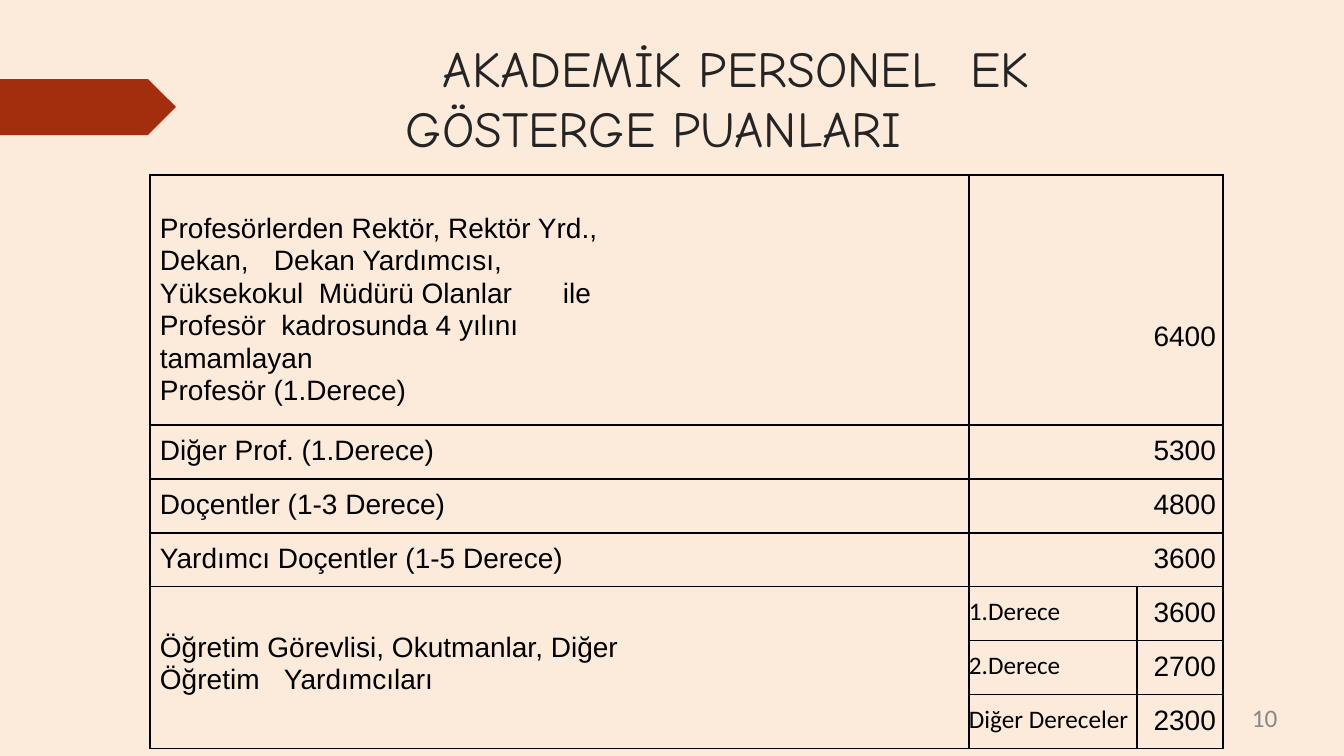
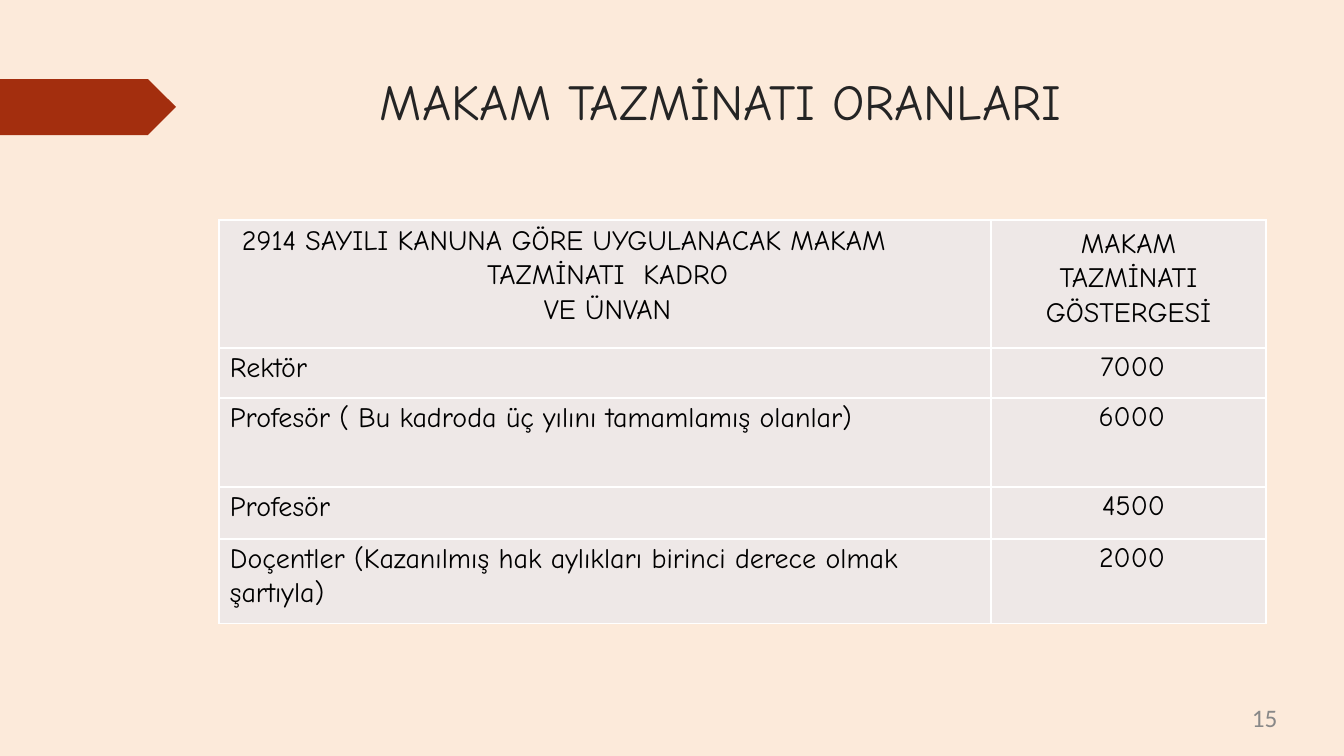
from lxml.etree import SubElement
from pptx import Presentation
from pptx.dml.color import RGBColor
from pptx.enum.shapes import MSO_SHAPE
from pptx.enum.text import MSO_ANCHOR, PP_ALIGN
from pptx.oxml.ns import qn
from pptx.util import Pt

EMU_PER_PX = 914400 / 100.8

CREAM = RGBColor(0xFC, 0xEA, 0xDA)
RUST = RGBColor(0xA3, 0x2E, 0x0E)
INK = RGBColor(0x24, 0x24, 0x24)
GREY = RGBColor(0x88, 0x88, 0x88)
PALE = RGBColor(0xEE, 0xE8, 0xE7)
BLACK = RGBColor(0x00, 0x00, 0x00)
WHITE = RGBColor(0xFF, 0xFF, 0xFF)

HAND, SANS, SMALL = "Comic Neue", "Arial", "Calibri"
LEFT, CENTER, RIGHT = PP_ALIGN.LEFT, PP_ALIGN.CENTER, PP_ALIGN.RIGHT
TOP, MIDDLE = MSO_ANCHOR.TOP, MSO_ANCHOR.MIDDLE


def px(n):
    return round(n * EMU_PER_PX)


def set_insets(holder, insets):
    """Set left, top, right and bottom margins of a cell or text frame."""
    (holder.margin_left, holder.margin_top,
     holder.margin_right, holder.margin_bottom) = map(px, insets)


def write(p, text, font, size, color, align=LEFT, spacing=None, tabs=()):
    p.text = text
    p.alignment = align
    if tabs:
        tab_list = SubElement(p._p.get_or_add_pPr(), qn("a:tabLst"))
        for pos in tabs:
            SubElement(tab_list, qn("a:tab"), pos=str(px(pos)), algn="l")
    if spacing:
        p.line_spacing = spacing
    p.font.name, p.font.size, p.font.color.rgb = font, Pt(size), color


def add_text(s, box, insets, text, font, size, color, spacing=None):
    tf = s.shapes.add_textbox(*map(px, box)).text_frame
    tf.word_wrap = True
    set_insets(tf, insets)
    p = tf.paragraphs[0]
    write(p, text, font, size, color, spacing=spacing)
    return p


def add_base(prs, title, title_box, number, indent=0):
    """Add a slide with the arrow tag, title and page number."""
    s = prs.slides.add_slide(prs.slide_layouts[6])
    tag = s.shapes.add_shape(MSO_SHAPE.PENTAGON, *map(px, (0, 79, 176, 56)))
    tag.shadow.inherit = False
    tag.fill.solid()
    tag.fill.fore_color.rgb = RUST
    tag.line.fill.background()
    p = add_text(s, title_box, (1, 2, 0, 0), title, HAND, 36, INK)
    p._p.get_or_add_pPr().set("indent", str(px(indent)))
    add_text(s, (1249, 707, 40, 28), (3, 0, 0, 0), number, SMALL, 18, GREY, Pt(18))
    return s


def add_grid(s, left, top, cols, rows, fill, border):
    shape = s.shapes.add_table(len(rows), len(cols), px(left), px(top),
                               px(sum(cols)), px(sum(rows)))
    table = shape.table
    table.first_row = table.horz_banding = False
    for col, width in zip(table.columns, cols):
        col.width = px(width)
    for row, height in zip(table.rows, rows):
        row.height = px(height)
    for cell in table.iter_cells():
        set_insets(cell, (0, 0, 0, 0))
        tc_pr = cell._tc.get_or_add_tcPr()
        for side in ("lnL", "lnR", "lnT", "lnB"):
            ln = SubElement(tc_pr, qn(f"a:{side}"), w=str(Pt(1)))
            solid = SubElement(ln, qn("a:solidFill"))
            SubElement(solid, qn("a:srgbClr"), val=str(border))
        cell.fill.solid()
        cell.fill.fore_color.rgb = fill
    return table


def fill_cell(cell, text, font, size=20, aligns=(LEFT,), insets=(0, 0, 0, 0),
              anchor=MIDDLE, spacing=None, tabs=()):
    """Write one paragraph for each line of text; aligns holds one value for each."""
    set_insets(cell, insets)
    cell.vertical_anchor = anchor
    tf = cell.text_frame
    for i, (line, align) in enumerate(zip(text.split("\n"), aligns)):
        p = tf.add_paragraph() if i else tf.paragraphs[0]
        write(p, line, font, size, BLACK, align, spacing, tabs)


def add_score_table(s, left, top):
    table = add_grid(s, left, top, (819, 168, 86), (250,) + (54,) * 6, CREAM, BLACK)
    for row in range(4):
        table.cell(row, 1).merge(table.cell(row, 2))
    table.cell(4, 0).merge(table.cell(6, 0))

    fill_cell(table.cell(0, 0),
              "Profesörlerden Rektör, Rektör Yrd., Dekan,\tDekan Yardımcısı, "
              "Yüksekokul  Müdürü Olanlar\tile Profesör  kadrosunda 4 yılını "
              "tamamlayan\nProfesör (1.Derece)",
              SANS, aligns=(LEFT, LEFT), insets=(10, 18, 349, 0),
              spacing=1.04, tabs=(114, 403))
    fill_cell(table.cell(0, 1), "6400", SANS, aligns=(RIGHT,), insets=(0, 74, 7, 0))

    ranks = (("Diğer Prof. (1.Derece)", "5300"),
             ("Doçentler (1-3 Derece)", "4800"),
             ("Yardımcı Doçentler (1-5 Derece)", "3600"))
    for row, (rank, score) in enumerate(ranks, 1):
        fill_cell(table.cell(row, 0), rank, SANS, insets=(10, 0, 0, 3))
        fill_cell(table.cell(row, 1), score, SANS, aligns=(RIGHT,), insets=(0, 0, 7, 3))

    fill_cell(table.cell(4, 0),
              "Öğretim Görevlisi, Okutmanlar, Diğer\nÖğretim\tYardımcıları",
              SANS, aligns=(LEFT, LEFT), insets=(10, 0, 0, 10),
              spacing=1.04, tabs=(124,))
    grades = (("1.Derece", "3600"), ("2.Derece", "2700"), ("Diğer Dereceler", "2300"))
    for row, (grade, score) in enumerate(grades, 4):
        fill_cell(table.cell(row, 1), grade, SMALL, 18, insets=(0, 0, 0, 4))
        fill_cell(table.cell(row, 2), score, SANS, aligns=(RIGHT,), insets=(0, 0, 7, 3))


def add_allowance_table(s, left, top):
    table = add_grid(s, left, top, (772, 275), (128, 50, 89, 52, 85), PALE, WHITE)
    fill_cell(table.cell(0, 0),
              "2914 SAYILI KANUNA GÖRE UYGULANACAK MAKAM\n"
              "TAZMİNATI  KADRO\vVE ÜNVAN",
              HAND, aligns=(LEFT, CENTER), insets=(23, 3, 18, 0),
              anchor=TOP, spacing=1.07)
    fill_cell(table.cell(0, 1), "MAKAM\vTAZMİNATI\vGÖSTERGESİ", HAND,
              aligns=(CENTER,), insets=(0, 6, 0, 0), anchor=TOP, spacing=1.07)

    posts = (("Rektör", "7000"),
             ("Profesör ( Bu kadroda üç yılını tamamlamış olanlar)", "6000"),
             ("Profesör", "4500"),
             ("Doçentler (Kazanılmış hak aylıkları birinci derece olmak\vşartıyla)",
              "2000"))
    for row, (post, score) in enumerate(posts, 1):
        fill_cell(table.cell(row, 0), post, HAND, insets=(11, 2, 0, 0),
                  anchor=TOP, spacing=1.07)
        fill_cell(table.cell(row, 1), score, HAND, aligns=(RIGHT,),
                  insets=(0, 3, 101, 0), anchor=TOP)


def main():
    prs = Presentation()
    prs.slide_width, prs.slide_height = px(1344), px(756)
    background = prs.slide_master.background.fill
    background.solid()
    background.fore_color.rgb = CREAM

    s = add_base(prs, "AKADEMİK PERSONEL  EK GÖSTERGE PUANLARI",
                 (405, 35, 631, 124), "10", indent=37)
    add_score_table(s, 150, 175)

    s = add_base(prs, "MAKAM TAZMİNATI ORANLARI", (379, 68, 815, 64), "15")
    add_allowance_table(s, 219, 220)

    prs.save("out.pptx")


if __name__ == "__main__":
    main()
